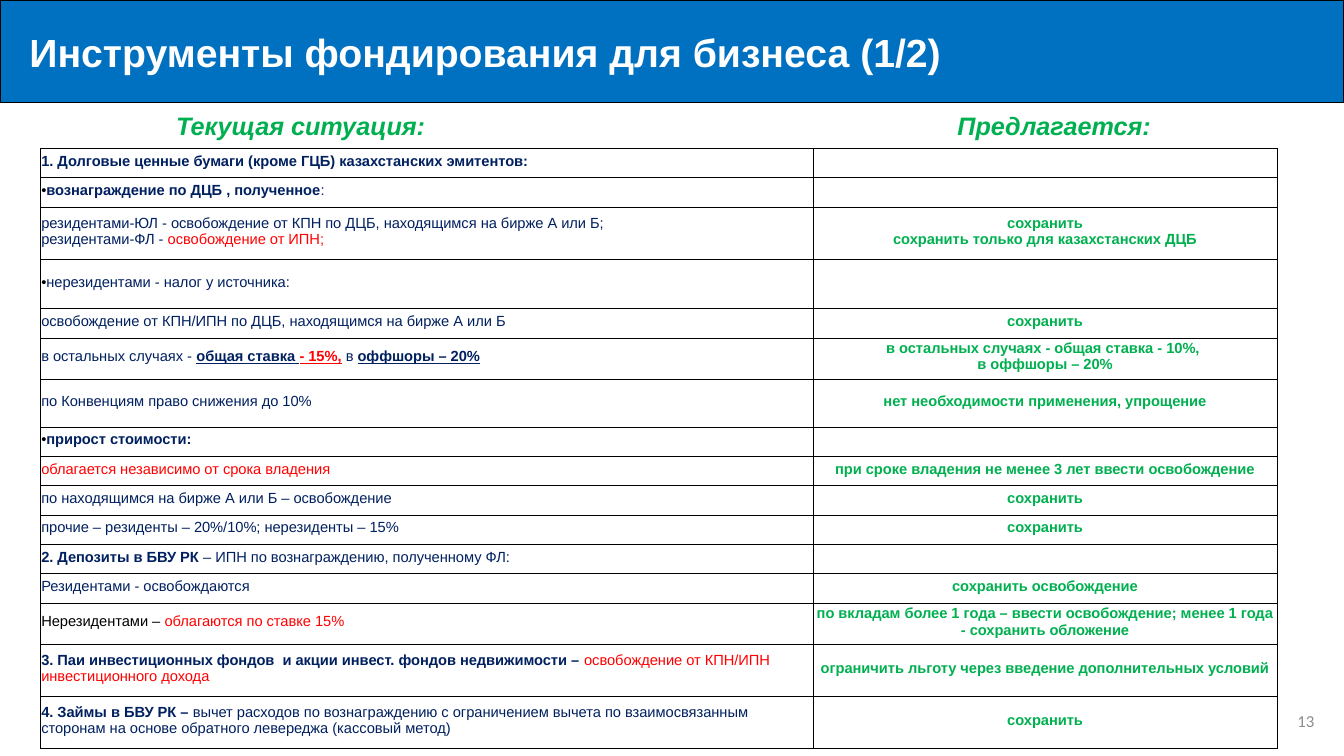
import pptx
import pptx.dml.color
import pptx.enum.shapes
import pptx.enum.text
import pptx.oxml
import pptx.oxml.ns
import pptx.util

Pt = pptx.util.Pt
RGB = pptx.dml.color.RGBColor
ALIGN = pptx.enum.text.PP_ALIGN
MIDDLE = pptx.enum.text.MSO_ANCHOR.MIDDLE

BLUE = RGB(0x00, 0x70, 0xC0)
NAVY = RGB(0x00, 0x20, 0x60)
GREEN = RGB(0x00, 0xB0, 0x50)
RED = RGB(0xFF, 0x00, 0x00)
BLACK = RGB(0x00, 0x00, 0x00)
WHITE = RGB(0xFF, 0xFF, 0xFF)
GREY = RGB(0x8C, 0x8C, 0x8C)

PLAIN = (NAVY, False, False)
BOLD = (NAVY, True, False)
UNDERLINED = (NAVY, True, True)
ALERT = (RED, False, False)
ALERT_UNDERLINED = (RED, True, True)
DARK = (BLACK, False, False)
PROPOSED = (GREEN, True, False)

KEEP = ["сохранить"]
COLUMN_WIDTHS = (552, 331.5)
SINGLE, DOUBLE, TALL = 21, 28, 37.3

MEASURES = [
    (SINGLE, [[("1. Долговые ценные бумаги (кроме ГЦБ) казахстанских эмитентов:", BOLD)]], []),
    (SINGLE, [[("•", DARK), ("вознаграждение по ДЦБ , полученное", BOLD), (":", PLAIN)]], []),
    (TALL, [[("резидентами-ЮЛ - освобождение от КПН по ДЦБ, находящимся на бирже А или Б;", PLAIN)],
            [("резидентами-ФЛ - ", PLAIN), ("освобождение от ИПН;", ALERT)]],
     ["сохранить", "сохранить только для казахстанских ДЦБ"]),
    (35.3, [[("•", DARK), ("нерезидентами - налог у источника:", PLAIN)]], []),
    (SINGLE, [[("освобождение от КПН/ИПН по ДЦБ, находящимся на бирже А или Б", PLAIN)]], KEEP),
    (DOUBLE, [[("в остальных случаях - ", PLAIN), ("общая ставка ", UNDERLINED),
               ("- 15%,", ALERT_UNDERLINED), (" в ", PLAIN), ("оффшоры – 20%", UNDERLINED)]],
     ["в остальных случаях - общая ставка - 10%, ", "в оффшоры – 20%"]),
    (34, [[("по Конвенциям право снижения до 10%", PLAIN)]],
     ["нет необходимости применения, упрощение"]),
    (SINGLE, [[("•", DARK), ("прирост стоимости:", BOLD)]], []),
    (SINGLE, [[("облагается независимо от срока владения", ALERT)]],
     ["при сроке владения не менее 3 лет ввести освобождение"]),
    (SINGLE, [[("по находящимся на бирже А или Б – освобождение", PLAIN)]], KEEP),
    (SINGLE, [[("прочие – резиденты – 20%/10%; нерезиденты – 15%", PLAIN)]], KEEP),
    (SINGLE, [[("2. Депозиты в БВУ РК ", BOLD),
               ("– ИПН по вознаграждению, полученному ФЛ:", PLAIN)]], []),
    (SINGLE, [[("Резидентами - освобождаются", PLAIN)]], ["сохранить освобождение"]),
    (DOUBLE, [[("Нерезидентами – ", DARK), ("облагаются по ставке 15%", ALERT)]],
     ["по вкладам более 1 года – ввести освобождение; менее 1 года - сохранить обложение"]),
    (TALL, [[("3. Паи инвестиционных фондов  и акции инвест. фондов недвижимости – ", BOLD),
             ("освобождение от КПН/ИПН инвестиционного дохода", ALERT)]],
     ["ограничить льготу через введение дополнительных условий"]),
    (TALL, [[("4. Займы в БВУ РК – ", BOLD),
             ("вычет расходов по вознаграждению с ограничением вычета по взаимосвязанным "
              "сторонам на основе обратного левереджа (кассовый метод)", PLAIN)]], KEEP),
]


def style_font(font, name, size, color, bold=False, italic=False):
    font.name = name
    font.size = Pt(size)
    font.color.rgb = color
    font.bold = bold
    font.italic = italic


def add_title_band(slide, left, top, width, height):
    band = slide.shapes.add_shape(pptx.enum.shapes.MSO_SHAPE.RECTANGLE,
                                  Pt(left), Pt(top), Pt(width), Pt(height))
    band.shadow.inherit = False
    band.fill.solid()
    band.fill.fore_color.rgb = BLUE
    band.line.color.rgb = BLACK
    band.line.width = Pt(1)
    frame = band.text_frame
    frame.margin_left = Pt(21)
    frame.vertical_anchor = MIDDLE
    title = frame.paragraphs[0]
    title.text = "Инструменты фондирования для бизнеса (1/2)"
    title.alignment = ALIGN.LEFT
    style_font(title.font, "Arial", 28, WHITE, bold=True)


def add_label(slide, left, top, width, height, wording, alignment=ALIGN.LEFT):
    frame = slide.shapes.add_textbox(Pt(left), Pt(top), Pt(width), Pt(height)).text_frame
    frame.word_wrap = True
    frame.vertical_anchor = MIDDLE
    label = frame.paragraphs[0]
    label.text = wording
    label.alignment = alignment
    return label


def add_heading(slide, left, top, width, height, wording):
    heading = add_label(slide, left, top, width, height, wording)
    style_font(heading.font, "Arial", 18, GREEN, bold=True, italic=True)


def add_page_number(slide, left, top, width, height):
    number = add_label(slide, left, top, width, height, "13", ALIGN.RIGHT)
    style_font(number.font, "Calibri", 12, GREY)


def add_borders(cell):
    properties = cell._tc.get_or_add_tcPr()
    for side in ("lnL", "lnR", "lnT", "lnB"):
        properties.append(pptx.oxml.parse_xml(
            f'<a:{side} {pptx.oxml.ns.nsdecls("a")} w="{Pt(0.5)}">'
            f'<a:solidFill><a:srgbClr val="{BLACK}"/></a:solidFill></a:{side}>'))


def fill_cell(cell, lines, alignment):
    add_borders(cell)
    cell.fill.background()
    cell.vertical_anchor = MIDDLE
    cell.margin_left = cell.margin_right = cell.margin_top = Pt(0.7)
    cell.margin_bottom = Pt(3.6)
    frame = cell.text_frame
    if not lines:
        frame.paragraphs[0]._p.append(pptx.oxml.parse_xml(
            f'<a:endParaRPr {pptx.oxml.ns.nsdecls("a")} sz="1050"/>'))
    for index, line in enumerate(lines):
        paragraph = frame.add_paragraph() if index else frame.paragraphs[0]
        paragraph.alignment = alignment
        paragraph.font.name = "Arial"
        paragraph.font.size = Pt(10.5)
        for wording, (color, bold, underline) in line:
            run = paragraph.add_run()
            run.text = wording
            run.font.color.rgb = color
            run.font.bold = bold
            run.font.underline = underline


def add_measures_table(slide, left, top):
    heights = [measure[0] for measure in MEASURES]
    table = slide.shapes.add_table(len(MEASURES), 2, Pt(left), Pt(top),
                                   Pt(sum(COLUMN_WIDTHS)), Pt(sum(heights))).table
    table.first_row = False
    table.horz_banding = False
    for column, width in zip(table.columns, COLUMN_WIDTHS):
        column.width = Pt(width)
    for row, (height, current, proposed) in zip(table.rows, MEASURES):
        row.height = Pt(height)
        fill_cell(row.cells[0], current, ALIGN.LEFT)
        fill_cell(row.cells[1], [[(wording, PROPOSED)] for wording in proposed], ALIGN.CENTER)


def main():
    deck = pptx.Presentation()
    deck.slide_width = Pt(960)
    deck.slide_height = Pt(540)
    slide = deck.slides.add_slide(deck.slide_layouts[6])
    add_title_band(slide, 0, 0, 960, 73.4)
    add_heading(slide, 676.8, 75.6, 167, 28, "Предлагается:")
    add_heading(slide, 118.8, 75.6, 247, 28, "Текущая ситуация:")
    add_measures_table(slide, 28.8, 106)
    add_page_number(slide, 730, 500.4, 216, 28.8)
    deck.save("out.pptx")


if __name__ == "__main__":
    main()
